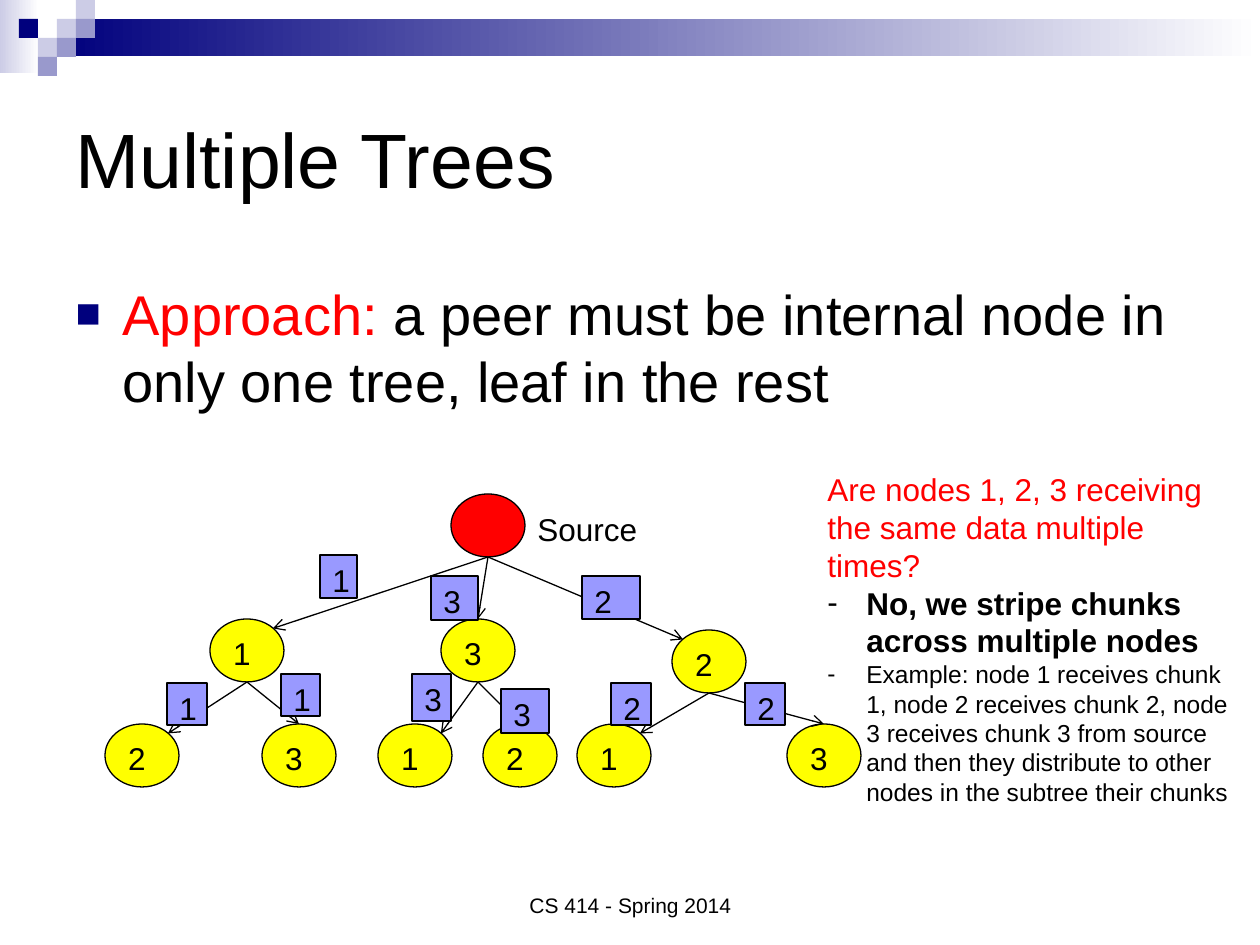
from lxml.etree import SubElement
from pptx import Presentation
from pptx.dml.color import RGBColor
from pptx.enum.shapes import MSO_CONNECTOR, MSO_SHAPE
from pptx.enum.text import MSO_ANCHOR, MSO_AUTO_SIZE, PP_ALIGN
from pptx.oxml.ns import qn
from pptx.util import Pt

PX = 914400 / 126
BLACK, RED, YELLOW, NAVY = "000000", "FF0000", "FFFF00", "00007D"
PALE, MID, CHUNK = "CCCCE6", "9999CC", "9999FF"

# Content: paragraphs are (bullet, indent px, runs), runs are (text, size, colour, bold)
TITLE = [(None, 0, [("Multiple Trees", 44, BLACK, False)])]
BODY = [("■", 47, [
    ("Approach:", 32, RED, False),
    (" a peer must be internal node in only one tree, leaf in the rest", 32, BLACK, False)])]
FOOTER = [(None, 0, [("CS 414 - Spring 2014", 12, BLACK, False)])]
SOURCE = [(None, 0, [("Source", 18, BLACK, False)])]
ANSWER = [
    (None, 0, [("Are nodes 1, 2, 3 receiving the same data multiple times?", 18, RED, False)]),
    ("-", 39, [("No, we stripe chunks across multiple nodes", 18, BLACK, True)]),
    ("-", 39, [("Example: node 1 receives chunk 1, node 2 receives chunk 2, node 3 "
                "receives chunk 3 from source and then they distribute to other nodes "
                "in the subtree their chunks", 14, BLACK, False)]),
]

# Header decoration: gradient bars, then squares on a grid (column, row, colour)
BARS = [(0, 0, 39, 73, PALE), (57, 19, 1203, 37, NAVY)]
SQUARE = 19
SQUARES = [(3, 1, PALE), (4, 0, PALE), (4, 1, MID), (2, 2, PALE),
           (1, 1, NAVY), (3, 2, MID), (2, 3, MID)]
SQUARES = [(c, r, color) for c, r, color in SQUARES if (c, r) != (4, 1)] + [(4, 1, MID)]

# Trees: parent (label, left, top) and its leaves (label, left, arrow target)
NODE_W, NODE_H, LEAF_TOP = 74, 63, 724
ROOT = (451, 494)
TREES = [
    ("1", 210, 619, "right", [("2", 105, "right"), ("3", 262, "top")]),
    ("2", 672, 630, "left", [("1", 577, "right"), ("3", 787, "top")]),
    ("3", 441, 619, "top", [("1", 378, "right"), ("2", 483, "top")]),
]
# Share of the node's width and height where an arrow lands
TARGETS = {"left": (0.15, 0.15), "top": (0.5, 0), "right": (0.85, 0.15)}
CHUNKS = [
    ("1", 320, 555, 37, 43), ("3", 431, 576, 47, 44), ("2", 611, 683, 40, 42),
    ("2", 582, 576, 58, 43), ("3", 412, 674, 39, 47), ("1", 281, 674, 39, 42),
    ("1", 167, 683, 40, 42), ("3", 501, 689, 48, 44), ("2", 745, 683, 40, 42),
]


def emu(*lengths):
    return [round(v * PX) for v in lengths]


def rgb(color):
    return RGBColor.from_string(color)


def write(tf, paragraphs, **frame):
    settings = {"word_wrap": True, "auto_size": MSO_AUTO_SIZE.NONE,
                "vertical_anchor": MSO_ANCHOR.TOP}
    for name, value in {**settings, **frame}.items():
        setattr(tf, name, value)
    for i, (bullet, indent, runs) in enumerate(paragraphs):
        p = tf.add_paragraph() if i else tf.paragraphs[0]
        p.alignment = PP_ALIGN.LEFT
        if bullet:
            add_bullet(p, bullet, indent)
        for text, size, color, bold in runs:
            r = p.add_run()
            r.text = text
            for name, value in {"name": "Arial", "size": Pt(size), "bold": bold}.items():
                setattr(r.font, name, value)
            r.font.color.rgb = rgb(color)


def add_bullet(p, char, indent):
    pPr = p._p.get_or_add_pPr()
    margin = emu(indent)[0]
    pPr.set("marL", str(margin))
    pPr.set("indent", str(-margin))
    if char == "■":
        SubElement(SubElement(pPr, qn("a:buClr")), qn("a:srgbClr")).set("val", NAVY)
        SubElement(pPr, qn("a:buSzPct")).set("val", "75000")
    SubElement(pPr, qn("a:buFont")).set("typeface", "Arial")
    SubElement(pPr, qn("a:buChar")).set("char", char)


def place(sp, *box):
    for name, value in zip(("left", "top", "width", "height"), emu(*box)):
        setattr(sp, name, value)
    return sp.text_frame


def add_block(kind, box, fill, label=None, outlined=True):
    sp = shapes.add_shape(kind, *emu(*box))
    sp.shadow.inherit = False
    sp.fill.solid()
    sp.fill.fore_color.rgb = rgb(fill)
    if outlined:
        sp.line.color.rgb = rgb(BLACK)
        sp.line.width = Pt(0.75)
    else:
        sp.line.fill.background()
    if label:
        write(sp.text_frame, [(None, 0, [(label, 18, BLACK, False)])])
    return sp


def add_arrow(parent, child, target):
    fx, fy = TARGETS[target]
    start = parent[0] + NODE_W / 2, parent[1] + NODE_H
    end = child[0] + fx * NODE_W, child[1] + fy * NODE_H
    line = shapes.add_connector(MSO_CONNECTOR.STRAIGHT, *emu(*start, *end))
    line.line.color.rgb = rgb(BLACK)
    line.line.width = Pt(0.75)
    SubElement(line.line._get_or_add_ln(), qn("a:tailEnd")).set("type", "arrow")
    SubElement(line._element.spPr, qn("a:effectLst"))


prs = Presentation()
prs.slide_width, prs.slide_height = emu(1260, 945)
s = prs.slides.add_slide(prs.slide_layouts[1])
shapes = s.shapes

# Title and body
write(place(shapes.title, 63, 63, 1134, 189), TITLE, vertical_anchor=MSO_ANCHOR.MIDDLE)
write(place(s.placeholders[1], 63, 273, 1134, 536), BODY)

# Header decoration
for *box, color in BARS:
    bar = add_block(MSO_SHAPE.RECTANGLE, box, color, outlined=False)
    bar.fill.gradient()
    bar.fill.gradient_angle = 0
    for stop, shade in zip(bar.fill.gradient_stops, (color, "FFFFFF")):
        stop.color.rgb = rgb(shade)
for col, row, color in SQUARES:
    add_block(MSO_SHAPE.RECTANGLE, (col * SQUARE, row * SQUARE, SQUARE, SQUARE),
              color, outlined=False)

# Nodes, then arrows above them
edges = []
add_block(MSO_SHAPE.OVAL, (*ROOT, NODE_W, NODE_H), RED)
for label, left, top, target, leaves in TREES:
    add_block(MSO_SHAPE.OVAL, (left, top, NODE_W, NODE_H), YELLOW, label)
    edges.append((ROOT, (left, top), target))
    for leaf, x, side in leaves:
        add_block(MSO_SHAPE.OVAL, (x, LEAF_TOP, NODE_W, NODE_H), YELLOW, leaf)
        edges.append(((left, top), (x, LEAF_TOP), side))
for edge in edges:
    add_arrow(*edge)

# Chunks carried along the arrows
for label, *box in CHUNKS:
    add_block(MSO_SHAPE.RECTANGLE, box, CHUNK, label)

# Source label, answer and footer
write(shapes.add_textbox(*emu(525, 504, 126, 50)).text_frame, SOURCE, word_wrap=False)
write(shapes.add_textbox(*emu(815, 464, 441, 351)).text_frame, ANSWER)
footer = shapes.add_textbox(*emu(431, 861, 399, 63)).text_frame
write(footer, FOOTER, vertical_anchor=MSO_ANCHOR.BOTTOM)
footer.paragraphs[0].alignment = PP_ALIGN.CENTER

prs.save("out.pptx")
